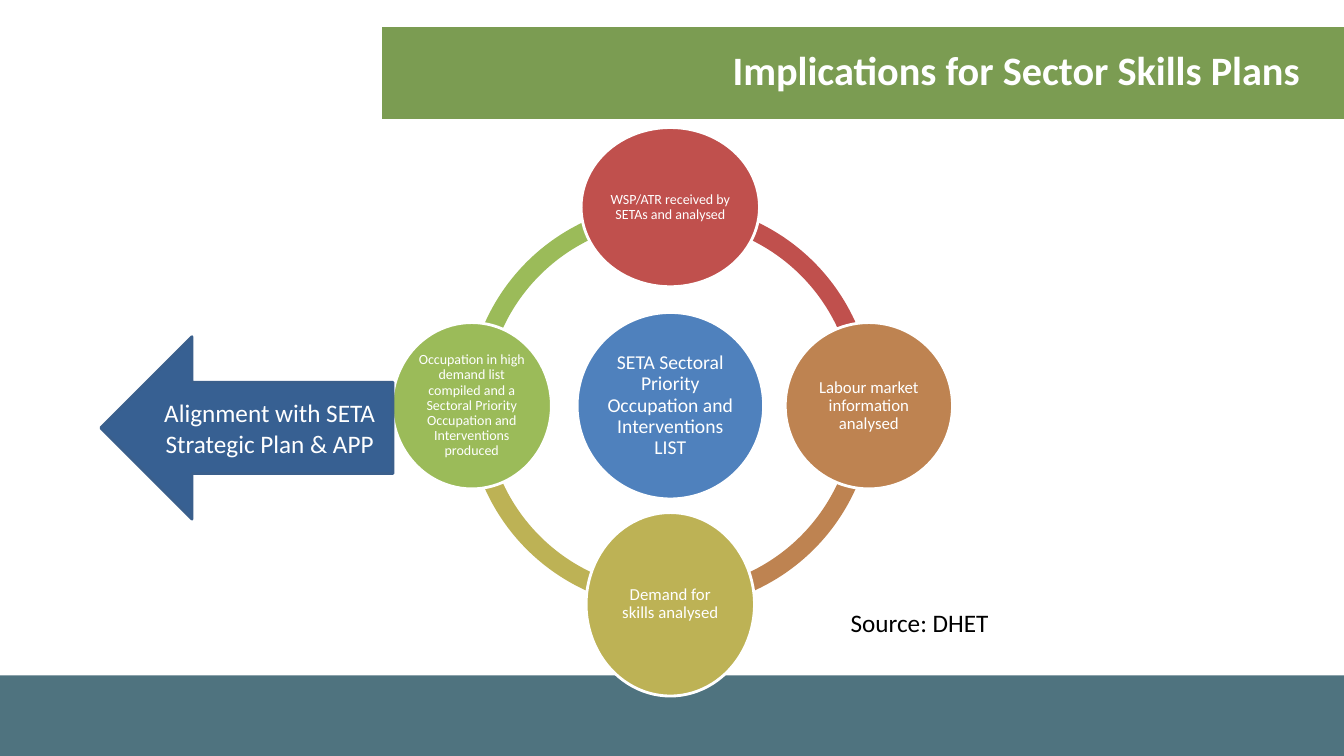
from dataclasses import dataclass
from math import cos, radians, sin
from typing import Optional

from pptx import Presentation
from pptx.dml.color import RGBColor
from pptx.enum.shapes import MSO_SHAPE
from pptx.enum.text import MSO_ANCHOR, MSO_AUTO_SIZE, PP_ALIGN
from pptx.shapes.autoshape import Shape
from pptx.slide import Slide
from pptx.text.text import TextFrame
from pptx.util import Inches, Pt

COLOURS = {
    "footer": "4F737F", "banner": "7B9C52", "white": "FFFFFF", "black": "000000",
    "blue": "4F81BD", "red": "C0504D", "brown": "BE8351", "olive": "BDB255",
    "green": "9BBB59", "arrow": "376092", "arrow edge": "3A5F8C",
}
FONT = "Calibri"
CELL = Inches(0.1)
COLUMNS, ROWS = 133.33, 75
HUB_COLUMN, HUB_ROW = 66.5, 40.25
ORBIT = 19.7
RING_SIZE = 40.3
RING_THICKNESS = 0.046
ADJUSTMENT_PER_DEGREE = 0.6


@dataclass(frozen=True)
class Area:
    column: float
    row: float
    columns: float
    rows: float

    def box(self) -> tuple[int, ...]:
        return tuple(round(cells * CELL)
                     for cells in (self.column, self.row, self.columns, self.rows))


@dataclass(frozen=True)
class Stage:
    wording: str
    colour: str
    columns: float
    rows: float
    size: float
    angle: Optional[int] = None


HUB = Stage("SETA Sectoral Priority Occupation and Interventions LIST",
            "blue", 18.5, 18.5, 14)
CYCLE = [
    Stage("WSP/ATR received by SETAs and analysed", "red", 17.7, 15.8, 10, 270),
    Stage("Labour market information analysed", "brown", 16.6, 16.5, 12, 0),
    Stage("Demand for skills analysed", "olive", 16.7, 18.2, 12, 90),
    Stage("Occupation in high demand list compiled and a Sectoral Priority "
          "Occupation and Interventions produced", "green", 15.8, 16.5, 10, 180),
]


def rgb(colour: str) -> RGBColor:
    return RGBColor.from_string(COLOURS[colour])


def centred(column: float, row: float, columns: float, rows: float) -> Area:
    return Area(column - columns / 2, row - rows / 2, columns, rows)


def write(frame: TextFrame, wording: str, size: float, colour: str = "white",
          align: PP_ALIGN = PP_ALIGN.CENTER, anchor: MSO_ANCHOR = MSO_ANCHOR.MIDDLE,
          bold: bool = False) -> None:
    frame.text = wording
    frame.word_wrap = True
    frame.vertical_anchor = anchor
    paragraph = frame.paragraphs[0]
    paragraph.alignment = align
    for run in paragraph.runs:
        run.font.name = FONT
        run.font.size = Pt(size)
        run.font.bold = bold
        run.font.color.rgb = rgb(colour)


def draw(slide: Slide, kind: MSO_SHAPE, area: Area, fill: str,
         edge: Optional[str] = None) -> Shape:
    shape = slide.shapes.add_shape(kind, *area.box())
    shape.shadow.inherit = False
    shape.fill.solid()
    shape.fill.fore_color.rgb = rgb(fill)
    if edge:
        shape.line.color.rgb = rgb(edge)
        shape.line.width = Pt(2)
    else:
        shape.line.fill.background()
    return shape


def draw_arc(slide: Slide, stage: Stage) -> None:
    ring = centred(HUB_COLUMN, HUB_ROW, RING_SIZE, RING_SIZE)
    arc = draw(slide, MSO_SHAPE.BLOCK_ARC, ring, stage.colour)
    arc.adjustments[0] = stage.angle * ADJUSTMENT_PER_DEGREE
    arc.adjustments[1] = (stage.angle + 90) % 360 * ADJUSTMENT_PER_DEGREE
    arc.adjustments[2] = RING_THICKNESS


def draw_stage(slide: Slide, stage: Stage) -> None:
    column, row = HUB_COLUMN, HUB_ROW
    if stage.angle is not None:
        column += ORBIT * cos(radians(stage.angle))
        row += ORBIT * sin(radians(stage.angle))
    area = centred(column, row, stage.columns, stage.rows)
    circle = draw(slide, MSO_SHAPE.OVAL, area, stage.colour, "white")
    frame = circle.text_frame
    frame.margin_left = frame.margin_right = Inches(0.02)
    frame.margin_top = frame.margin_bottom = Inches(0.02)
    write(frame, stage.wording, stage.size)
    frame.paragraphs[0].line_spacing = 0.9


def draw_heading(slide: Slide) -> None:
    banner = draw(slide, MSO_SHAPE.RECTANGLE, Area(37.9, 2.7, COLUMNS - 37.9, 9.1), "banner")
    heading = slide.shapes.title
    banner.element.addnext(heading.element)
    heading.left, heading.top, heading.width, heading.height = Area(10, 0.6, 120, 12.5).box()
    heading.text_frame.auto_size = MSO_AUTO_SIZE.NONE
    write(heading.text_frame, "Implications for Sector Skills Plans", 28.8,
          align=PP_ALIGN.RIGHT, bold=True)


def draw_alignment(slide: Slide) -> None:
    alignment = draw(slide, MSO_SHAPE.LEFT_ARROW, Area(10, 33.4, 29, 18.1),
                     "arrow", "arrow edge")
    write(alignment.text_frame, "Alignment with SETA Strategic Plan & APP", 18)


def draw_source(slide: Slide) -> None:
    source = slide.shapes.add_textbox(*Area(83.4, 59.8, 33.2, 4).box())
    write(source.text_frame, "Source: DHET", 18, "black", PP_ALIGN.LEFT, MSO_ANCHOR.TOP)
    source.text_frame.auto_size = MSO_AUTO_SIZE.SHAPE_TO_FIT_TEXT


def main() -> None:
    deck = Presentation()
    deck.slide_width = round(COLUMNS * CELL)
    deck.slide_height = ROWS * CELL
    slide = deck.slides.add_slide(deck.slide_layouts.get_by_name("Title Only"))
    draw(slide, MSO_SHAPE.RECTANGLE, Area(0, 67, COLUMNS, 8), "footer")
    draw_heading(slide)
    for stage in CYCLE:
        draw_arc(slide, stage)
    for stage in [HUB, *CYCLE]:
        draw_stage(slide, stage)
    draw_alignment(slide)
    draw_source(slide)
    deck.save("out.pptx")


if __name__ == "__main__":
    main()
